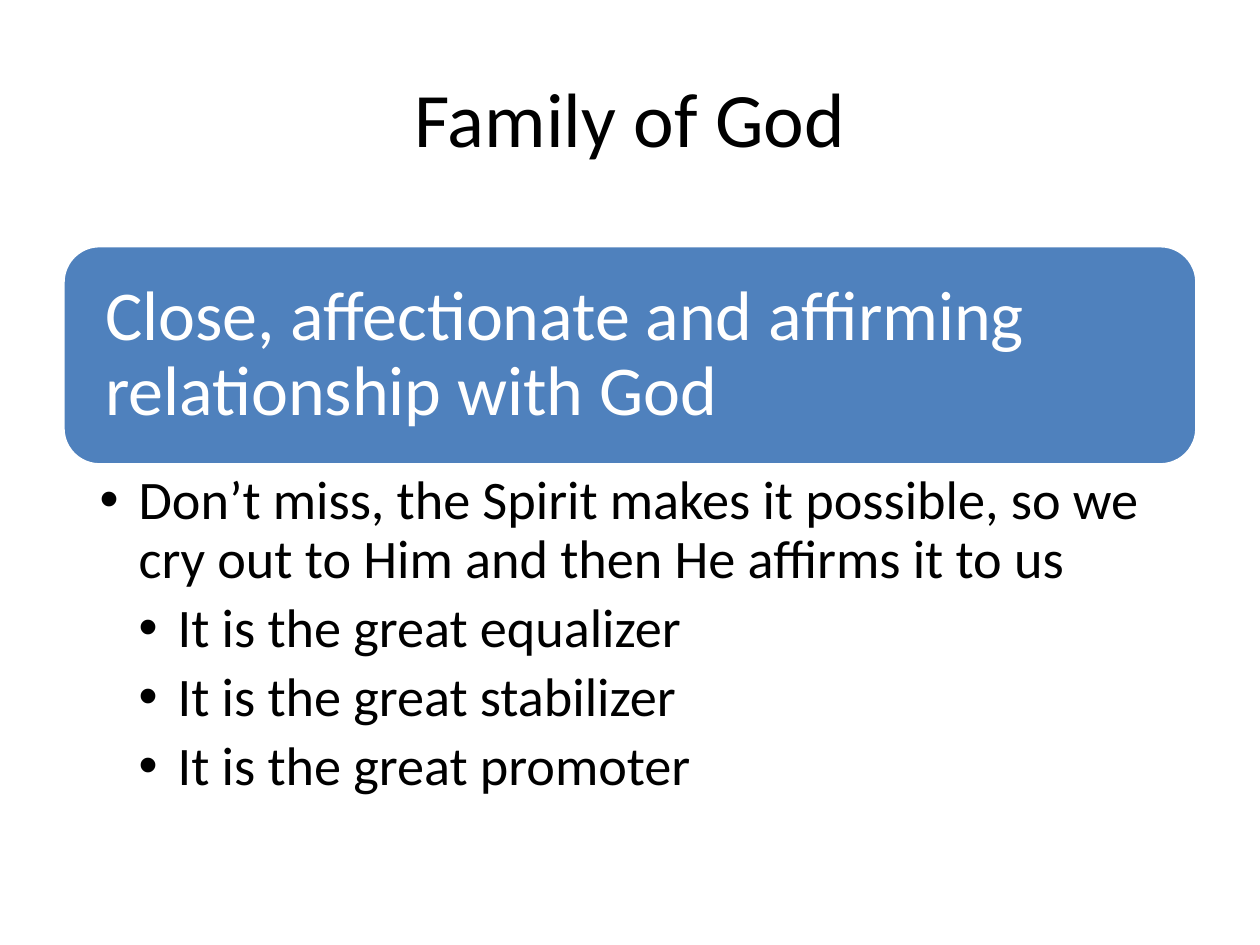
from lxml import etree
from pptx import Presentation
from pptx import util as u
from pptx.dml.color import RGBColor
from pptx.enum import shapes, text
from pptx.oxml import ns


def rgb(value):
    return RGBColor.from_string(value)


class SlideBuilder:
    font = "Calibri"
    black = "000000"
    white = "FFFFFF"
    blue = "4F81BD"

    def __init__(self, slide):
        self.s = slide

    def place(self, sp, box):
        for name, value in zip(("left", "top", "width", "height"), box):
            setattr(sp, name, u.Inches(value))

    def frame(self, sp, anchor, insets):
        tf = sp.text_frame
        formats = {
            "word_wrap": True,
            "auto_size": text.MSO_AUTO_SIZE.NONE,
            "vertical_anchor": anchor,
        }
        sides = ("margin_left", "margin_top", "margin_right", "margin_bottom")
        formats.update(zip(sides, map(u.Inches, insets)))
        for name, value in formats.items():
            setattr(tf, name, value)
        return tf

    def fill_paragraph(self, p, words, size, color, **formats):
        for name, value in formats.items():
            setattr(p, name, value)
        r = p.add_run()
        r.text = words
        for name, value in {"name": self.font, "size": u.Pt(size)}.items():
            setattr(r.font, name, value)
        r.font.color.rgb = rgb(color)

    def title(self, words, box):
        sp = self.s.shapes.title
        self.place(sp, box)
        tf = self.frame(sp, text.MSO_ANCHOR.MIDDLE, (0.1, 0.05, 0.1, 0.05))
        self.fill_paragraph(tf.paragraphs[0], words, 44, self.black,
                            alignment=text.PP_ALIGN.CENTER)

    def banner(self, words, box):
        sp = self.s.shapes.add_shape(
            shapes.MSO_SHAPE.ROUNDED_RECTANGLE, *map(u.Inches, box))
        sp.shadow.inherit = False
        sp.fill.solid()
        sp.fill.fore_color.rgb = rgb(self.blue)
        sp.line.color.rgb = rgb(self.white)
        sp.line.width = u.Pt(2)
        tf = self.frame(sp, text.MSO_ANCHOR.MIDDLE, (0.25,) * 4)
        self.fill_paragraph(tf.paragraphs[0], words, 40, self.white,
                            alignment=text.PP_ALIGN.LEFT, line_spacing=0.9,
                            space_after=u.Pt(14))

    def bullet(self, p, level):
        step = u.Inches(0.31)
        pPr = p._p.get_or_add_pPr()
        pPr.set("marL", str(step * level))
        pPr.set("indent", str(-step))
        etree.SubElement(pPr, ns.qn("a:buFont")).set("typeface", "Arial")
        etree.SubElement(pPr, ns.qn("a:buChar")).set("char", "•")

    def bullets(self, items, box):
        sp = self.s.placeholders[1]
        self.place(sp, box)
        tf = self.frame(sp, text.MSO_ANCHOR.TOP, (0.29, 0.06, 0.31, 0.06))
        for i, (level, words) in enumerate(items):
            p = tf.add_paragraph() if i else tf.paragraphs[0]
            self.fill_paragraph(p, words, 31, self.black, level=level,
                                alignment=text.PP_ALIGN.LEFT, line_spacing=0.9,
                                space_before=u.Pt(0), space_after=u.Pt(6))
            self.bullet(p, level)


def main():
    prs = Presentation()
    prs.slide_width, prs.slide_height = u.Inches(10), u.Inches(7.5)
    b = SlideBuilder(prs.slides.add_slide(prs.slide_layouts[1]))
    b.title("Family of God", (0.5, 0.3, 9, 1.25))
    b.banner("Close, affectionate and affirming relationship with God",
             (0.5, 1.95, 9, 1.74))
    b.bullets([
        (1, "Don’t miss, the Spirit makes it possible, so we cry out to Him "
            "and then He affirms it to us"),
        (2, "It is the great equalizer"),
        (2, "It is the great stabilizer"),
        (2, "It is the great promoter"),
    ], (0.5, 3.69, 9, 2.81))
    prs.save("out.pptx")


if __name__ == "__main__":
    main()
